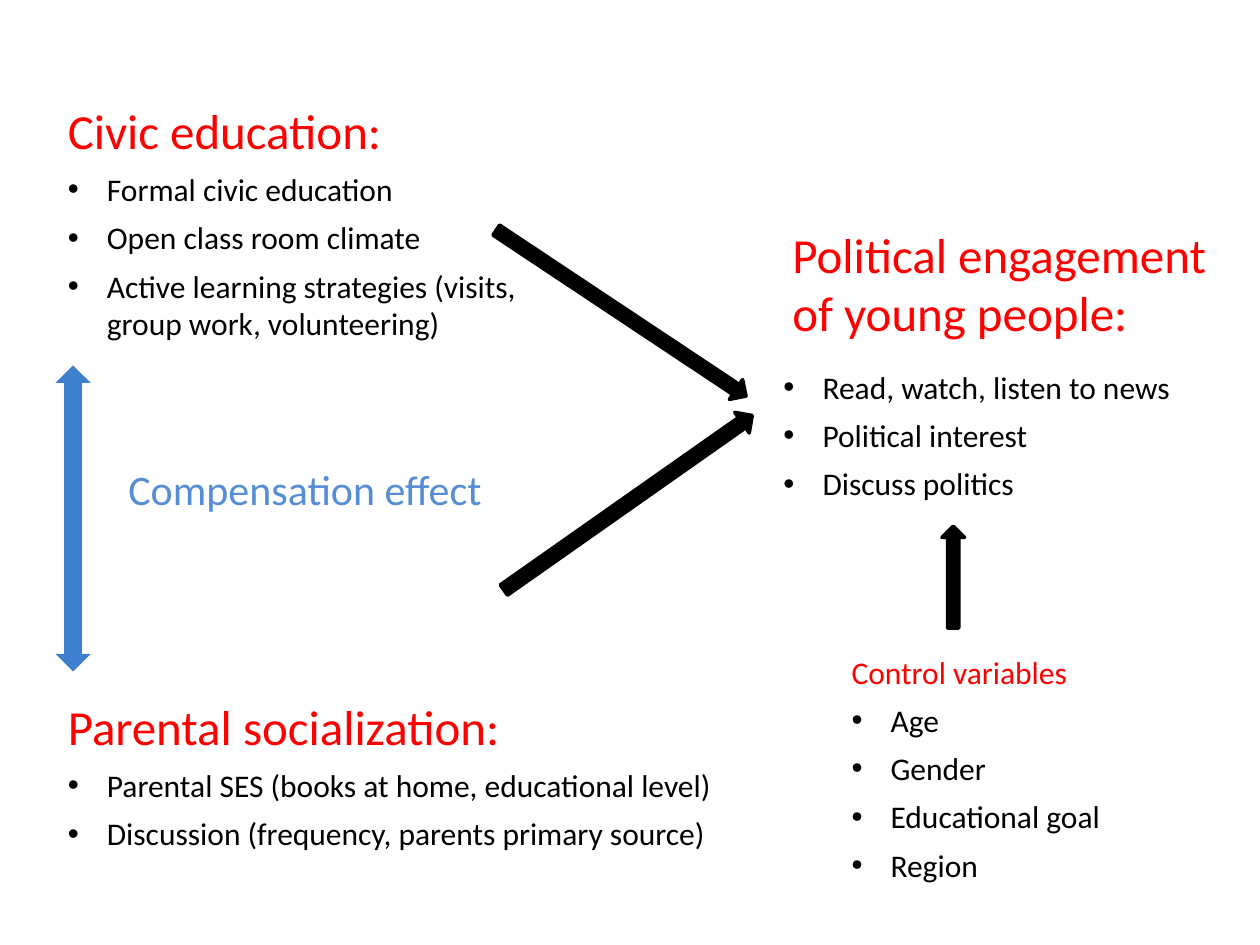
"""Build a slide on how civic education and parents shape young people's political engagement."""
from lxml.etree import Element
from pptx import Presentation
from pptx.dml.color import RGBColor
from pptx.enum.shapes import MSO_SHAPE
from pptx.enum.text import MSO_AUTO_SIZE
from pptx.oxml.ns import qn
from pptx.util import Inches, Pt

COLORS = {"heading": "FF0000", "body": "000000", "arrow": "000000",
          "compensation": "558ED5", "double_arrow": "3F80CE"}


def add_text(page, place, wrap, lines, space_after):
    box = page.shapes.add_textbox(*[Inches(value) for value in place])
    frame = box.text_frame
    frame.word_wrap = wrap
    frame.auto_size = MSO_AUTO_SIZE.SHAPE_TO_FIT_TEXT
    for index, (text, size, color, bulleted) in enumerate(lines):
        para = frame.paragraphs[0] if index == 0 else frame.add_paragraph()
        para.text = text
        para.font.name = "Calibri"
        para.font.size = Pt(size)
        para.font.color.rgb = RGBColor.from_string(COLORS[color])
        para.space_after = Pt(space_after)
        if bulleted:
            properties = para._p.get_or_add_pPr()
            properties.set("marL", str(Inches(0.31)))
            properties.set("indent", str(-Inches(0.31)))
            default_run = properties.find(qn("a:defRPr"))
            default_run.addprevious(Element(qn("a:buFont"), typeface="Arial"))
            default_run.addprevious(Element(qn("a:buChar"), char="•"))


def add_arrow(page, preset, place, rotation, color):
    arrow = page.shapes.add_shape(preset, *[Inches(value) for value in place])
    arrow.rotation = rotation
    arrow.shadow.inherit = False
    arrow.fill.solid()
    arrow.fill.fore_color.rgb = RGBColor.from_string(COLORS[color])
    return arrow


deck = Presentation()
deck.slide_width = Inches(10)
deck.slide_height = Inches(7.5)
page = deck.slides.add_slide(deck.slide_layouts[6])

text_blocks = [
    ((6.12, 2.87, 3.47, 1.18), True, [], 18,
     ["Read, watch, listen to news", "Political interest", "Discuss politics"], 6),
    ((6.19, 1.73, 3.61, 1.04), False,
     ["Political engagement", "of young people:"], 28, [], 0),
    ((0.44, 0.75, 3.88, 2.04), True, ["Civic education:"], 28,
     ["Formal civic education", "Open class room climate",
      "Active learning strategies (visits, group work, volunteering)"], 6),
    ((0.44, 5.48, 5.37, 1.73), False, ["Parental socialization:"], 28,
     ["Parental SES (books at home, educational level)",
      "Discussion (frequency, parents primary source)"], 6),
    ((6.66, 5.13, 2.18, 2.34), False, ["Control variables"], 18,
     ["Age", "Gender", "Educational goal", "Region"], 6),
]
for place, wrap, headings, heading_size, bullets, space_after in text_blocks:
    lines = [(text, heading_size, "heading", False) for text in headings]
    lines += [(text, 18, "body", True) for text in bullets]
    add_text(page, place, wrap, lines, space_after)

add_text(page, (0.92, 3.63, 3.05, 0.5), False,
         [("Compensation effect", 24, "compensation", False)], 0)

influences = [
    ((3.74, 2.39, 2.38, 0.19), 33.6),
    ((3.78, 3.89, 2.41, 0.2), 324.9),
    ((7.16, 4.49, 0.81, 0.18), 270),
]
for place, rotation in influences:
    arrow = add_arrow(page, MSO_SHAPE.RIGHT_ARROW, place, rotation, "arrow")
    arrow.line.color.rgb = RGBColor.from_string(COLORS["arrow"])
    arrow.line.width = Pt(2)

compensation = add_arrow(page, MSO_SHAPE.UP_DOWN_ARROW,
                         (0.44, 2.9, 0.28, 2.43), 0, "double_arrow")
compensation.line.fill.background()

deck.save("out.pptx")
